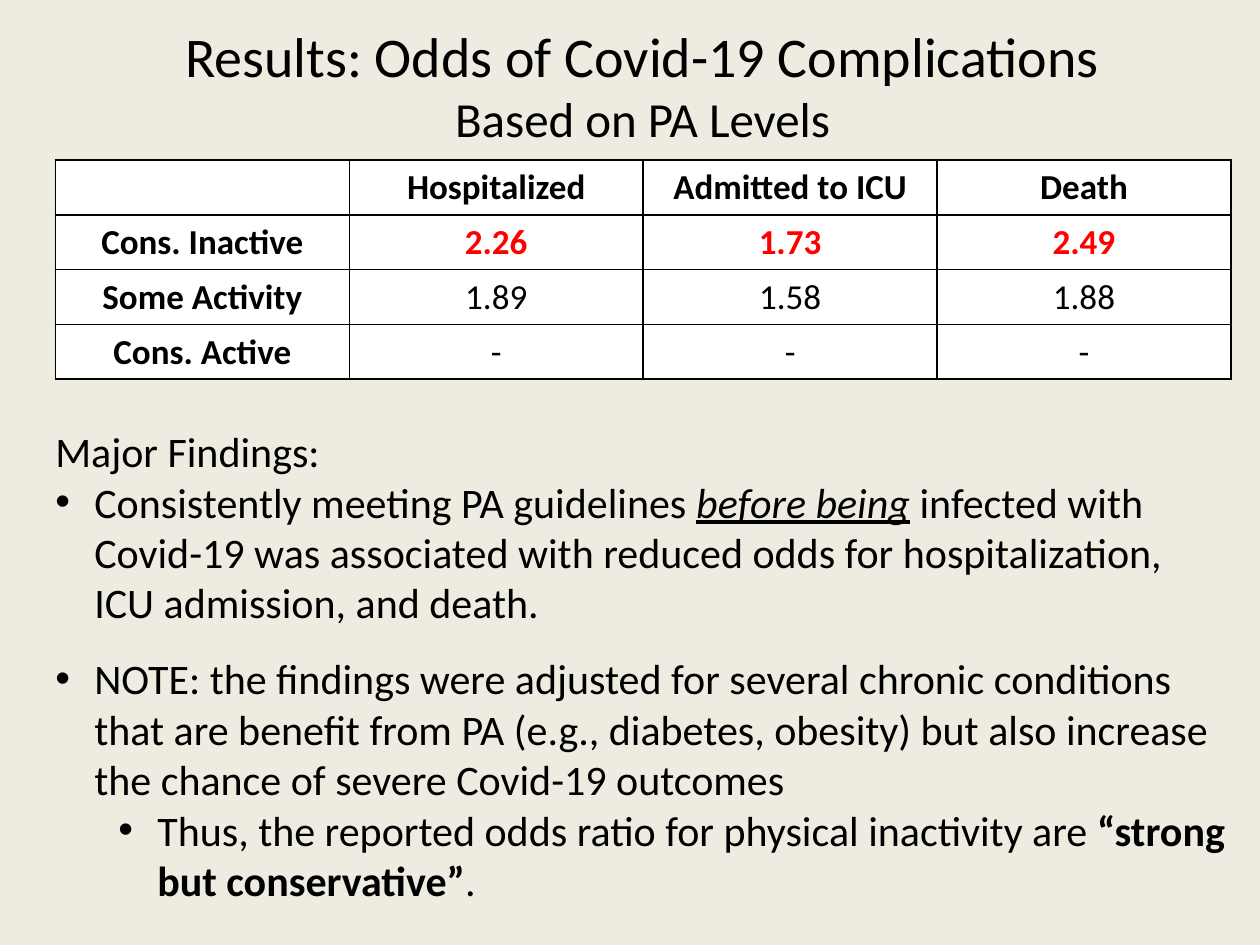
from dataclasses import dataclass

import pptx
import pptx.dml.color
import pptx.enum.text
import pptx.oxml
import pptx.oxml.ns
import pptx.text.text
import pptx.util
from pptx.util import Inches

BACKGROUND = pptx.dml.color.RGBColor(0xEE, 0xEC, 0xE1)
BLACK = pptx.dml.color.RGBColor(0, 0, 0)
RED = pptx.dml.color.RGBColor(0xFF, 0, 0)
WHITE = pptx.dml.color.RGBColor(0xFF, 0xFF, 0xFF)
FONT = "Calibri"
CENTER = pptx.enum.text.PP_ALIGN.CENTER
BORDER_SIDES = ("L", "R", "T", "B")


@dataclass
class Span:
    text: str
    bold: bool = False
    emphasis: bool = False  # italic and underlined


@dataclass
class Finding:
    spans: list[Span]
    indent: float = 0  # inches; zero means no bullet
    level: int = 0
    space_before: float = 0  # points


ODDS_RATIOS = [
    ["", "Hospitalized", "Admitted to ICU", "Death"],
    ["Cons. Inactive", "2.26", "1.73", "2.49"],
    ["Some Activity", "1.89", "1.58", "1.88"],
    ["Cons. Active", "-", "-", "-"],
]
HIGHLIGHTED_ROW = 1

FINDINGS = [
    Finding([Span("Major Findings:")]),
    Finding([
        Span("Consistently meeting PA guidelines "),
        Span("before being", emphasis=True),
        Span(" infected with Covid-19 was associated with reduced odds for "
             "hospitalization, ICU admission, and death."),
    ], indent=0.31),
    Finding([
        Span("NOTE: the findings were adjusted for several chronic conditions that are "
             "benefit from PA (e.g., diabetes, obesity) but also increase the chance of "
             "severe Covid-19 outcomes"),
    ], indent=0.31, space_before=14.6),
    Finding([
        Span("Thus, the reported odds ratio for physical inactivity are "),
        Span("“strong but conservative”", bold=True),
        Span("."),
    ], indent=0.81, level=1),
]


def style_paragraph(paragraph: pptx.text.text._Paragraph, size: float,
                    color: pptx.dml.color.RGBColor = BLACK) -> None:
    paragraph.font.name = FONT
    paragraph.font.size = pptx.util.Pt(size)
    paragraph.font.color.rgb = color


def add_bullet(paragraph: pptx.text.text._Paragraph, indent: float) -> None:
    properties = paragraph._p.get_or_add_pPr()
    properties.set("marL", str(Inches(indent)))
    properties.set("indent", str(Inches(-0.31)))
    for tag, name, value in (("buFont", "typeface", "Arial"), ("buChar", "char", "•")):
        bullet = pptx.oxml.parse_xml(f'<a:{tag} {pptx.oxml.ns.nsdecls("a")} {name}="{value}"/>')
        properties.append(bullet)


def add_borders(cell) -> None:
    properties = cell._tc.get_or_add_tcPr()
    for position, side in enumerate(BORDER_SIDES):
        line = pptx.oxml.parse_xml(
            f'<a:ln{side} {pptx.oxml.ns.nsdecls("a")} w="{pptx.util.Pt(1)}">'
            f'<a:solidFill><a:srgbClr val="{BLACK}"/></a:solidFill></a:ln{side}>')
        properties.insert(position, line)


def add_title(slide) -> None:
    shape = slide.shapes.add_textbox(Inches(1.33), Inches(0.12), Inches(7.54), Inches(1.11))
    frame = shape.text_frame
    frame.word_wrap = False
    frame.auto_size = pptx.enum.text.MSO_AUTO_SIZE.SHAPE_TO_FIT_TEXT
    frame.text = "Results: Odds of Covid-19 Complications\nBased on PA Levels"
    for paragraph, size in zip(frame.paragraphs, (32, 28)):
        paragraph.alignment = CENTER
        style_paragraph(paragraph, size)


def add_odds_table(slide) -> None:
    table = slide.shapes.add_table(len(ODDS_RATIOS), len(ODDS_RATIOS[0]), Inches(0.44),
                                   Inches(1.27), Inches(9.33), Inches(1.74)).table
    table.first_row = False
    table.horz_banding = False
    for row_index, row in enumerate(ODDS_RATIOS):
        for column_index, text in enumerate(row):
            cell = table.cell(row_index, column_index)
            cell.fill.solid()
            cell.fill.fore_color.rgb = WHITE
            add_borders(cell)
            cell.text = text
            paragraph = cell.text_frame.paragraphs[0]
            paragraph.alignment = CENTER
            highlighted = row_index == HIGHLIGHTED_ROW
            style_paragraph(paragraph, 20, RED if highlighted and column_index else BLACK)
            paragraph.font.bold = row_index <= HIGHLIGHTED_ROW or column_index == 0


def add_findings(slide) -> None:
    shape = slide.shapes.add_textbox(Inches(0.34), Inches(3.33), Inches(9.52), Inches(4.14))
    frame = shape.text_frame
    frame.word_wrap = True
    frame.auto_size = pptx.enum.text.MSO_AUTO_SIZE.SHAPE_TO_FIT_TEXT
    for index, finding in enumerate(FINDINGS):
        paragraph = frame.add_paragraph() if index else frame.paragraphs[0]
        paragraph.level = finding.level
        paragraph.space_before = pptx.util.Pt(finding.space_before)
        if finding.indent:
            add_bullet(paragraph, finding.indent)
        style_paragraph(paragraph, 24)
        for span in finding.spans:
            run = paragraph.add_run()
            run.text = span.text
            if span.bold:
                run.font.bold = True
            if span.emphasis:
                run.font.italic = True
                run.font.underline = True


def main() -> None:
    presentation = pptx.Presentation()
    presentation.slide_width = Inches(10)
    presentation.slide_height = Inches(7.5)
    slide = presentation.slides.add_slide(presentation.slide_layouts[6])
    slide.background.fill.solid()
    slide.background.fill.fore_color.rgb = BACKGROUND

    add_title(slide)
    add_odds_table(slide)
    add_findings(slide)
    presentation.save("out.pptx")


if __name__ == "__main__":
    main()
